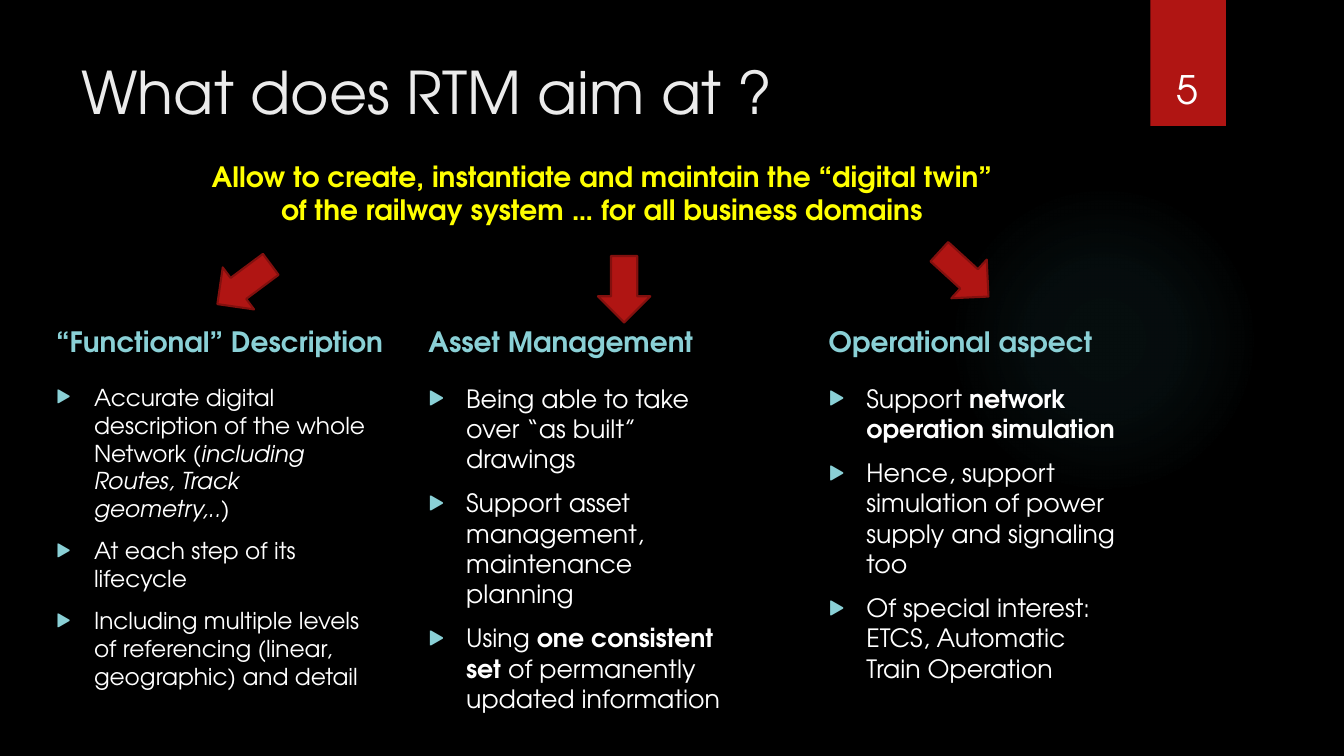
from lxml import etree
from pptx import Presentation
from pptx.dml.color import RGBColor
from pptx.enum.shapes import MSO_SHAPE as Preset
from pptx.enum.text import MSO_ANCHOR as Anchor, PP_ALIGN as Align
from pptx.oxml import parse_xml
from pptx.oxml.ns import nsdecls, qn
from pptx.util import Inches, Pt


def color(value):
    return RGBColor.from_string(value)


class SlideBuilder:
    FONT = "TeX Gyre Adventor"
    WHITE, RED, DARK_RED = "FFFFFF", "B01513", "82100E"
    AQUA, GLOW, YELLOW = "8AD0D6", "50B9C1", "FFFF00"
    TITLE = "EBEBEB"

    def __init__(self, slide):
        self.slide = slide
        fill = slide.background.fill
        fill.solid()
        fill.fore_color.rgb = color("000000")

    def shape(self, preset, left, top, width, height):
        shape = self.slide.shapes.add_shape(
            preset, Inches(left), Inches(top), Inches(width), Inches(height))
        shape.shadow.inherit = False
        shape.line.fill.background()
        return shape

    def block(self, preset, left, top, width, height):
        block = self.shape(preset, left, top, width, height)
        block.fill.solid()
        block.fill.fore_color.rgb = color(self.RED)
        return block

    def arrow(self, left, top, angle):
        arrow = self.block(Preset.RIGHT_ARROW, left, top, 0.66, 0.52)
        arrow.rotation = angle
        arrow.line.color.rgb = color(self.DARK_RED)
        arrow.line.width = Pt(1.5)

    def glow(self, left, top, size, stops):
        glow = self.shape(Preset.OVAL, left, top, size, size)
        steps = "".join(
            f'<a:gs pos="{place * 1000}"><a:srgbClr val="{self.GLOW}">'
            f'<a:alpha val="{alpha * 1000}"/></a:srgbClr></a:gs>'
            for place, alpha in stops)
        gradient = parse_xml(
            f'<a:gradFill {nsdecls("a")}><a:gsLst>{steps}</a:gsLst>'
            '<a:path path="circle"><a:fillToRect l="50000" t="50000" '
            'r="50000" b="50000"/></a:path></a:gradFill>')
        glow.element.spPr.find(qn("a:prstGeom")).addnext(gradient)

    def frame(self, left, top, width, height, anchor=Anchor.TOP, wrap=True):
        box = self.slide.shapes.add_textbox(
            Inches(left), Inches(top), Inches(width), Inches(height))
        frame = box.text_frame
        frame.word_wrap = wrap
        frame.vertical_anchor = anchor
        return frame

    def run(self, paragraph, text, size, ink, bold=False, italic=False):
        run = paragraph.add_run()
        run.text = text
        font = run.font
        font.name, font.size = self.FONT, Pt(size)
        font.bold, font.italic = bold, italic
        font.color.rgb = color(ink)

    def label(self, place, lines, size, ink, bold=False, align=Align.LEFT, **layout):
        paragraph = self.frame(*place, **layout).paragraphs[0]
        paragraph.alignment = align
        for index, line in enumerate(lines):
            if index:
                paragraph.add_line_break()
            self.run(paragraph, line, size, ink, bold)

    def bullet(self, paragraph):
        properties = paragraph._p.get_or_add_pPr()
        properties.set("marL", str(Inches(0.375)))
        properties.set("indent", str(-Inches(0.375)))
        bullet_color = etree.SubElement(properties, qn("a:buClr"))
        etree.SubElement(bullet_color, qn("a:srgbClr"), val=self.AQUA)
        etree.SubElement(properties, qn("a:buSzPct"), val="80000")
        etree.SubElement(properties, qn("a:buFont"), typeface=self.FONT)
        etree.SubElement(properties, qn("a:buChar"), char="▶")

    def column(self, left, width, heading, size, points):
        self.label((left, 3.08, 3.84, 0.52), [heading], 20, self.AQUA, True,
                   anchor=Anchor.BOTTOM)
        frame = self.frame(left, 3.75, width, 3.35)
        for index, point in enumerate(points):
            paragraph = frame.add_paragraph() if index else frame.paragraphs[0]
            self.bullet(paragraph)
            paragraph.space_before = Pt(10 if index else 0)
            for text, style in point:
                self.run(paragraph, text, size, self.WHITE,
                         bold=style == "bold", italic=style == "italic")


COLUMNS = [
    (0.46, 3.26, "“Functional” Description", 16.6, [
        [("Accurate digital description of the whole Network (", ""),
         ("including Routes, Track geometry,..", "italic"), (")", "")],
        [("At each step of its lifecycle", "")],
        [("Including multiple levels of referencing (linear, geographic) and detail", "")],
    ]),
    (4.15, 3.31, "Asset Management", 18, [
        [("Being able to take over “as built” drawings", "")],
        [("Support asset management, maintenance planning", "")],
        [("Using ", ""), ("one consistent set ", "bold"),
         ("of permanently updated information", "")],
    ]),
    (8.12, 3.1, "Operational aspect", 18, [
        [("Support ", ""), ("network operation simulation", "bold")],
        [("Hence, support simulation of power supply and signaling too", "")],
        [("Of special interest: ETCS, Automatic Train Operation", "")],
    ]),
]
ARROWS = [(2.09, 2.56, 143.3), (5.86, 2.61, 90), (9.23, 2.46, 42.4)]


def main():
    deck = Presentation()
    deck.slide_width, deck.slide_height = Inches(13.33), Inches(7.5)
    page = SlideBuilder(deck.slides.add_slide(deck.slide_layouts[6]))

    page.glow(9.41, 1.83, 3.08, [(0, 7), (36, 6), (69, 0), (100, 0)])
    page.block(Preset.RECTANGLE, 11.41, 0, 0.75, 1.25)
    page.label((11.32, 0.32, 0.92, 0.84), ["5"], 28, page.WHITE,
               align=Align.CENTER, anchor=Anchor.BOTTOM)
    page.label((0.71, 0.5, 10.29, 1.53), ["What does RTM aim at ?"], 42, page.TITLE)
    page.label((1.96, 1.53, 8.02, 0.77),
               ["Allow to create, instantiate and maintain the “digital twin”",
                "of the railway system … for all business domains"],
               20, page.YELLOW, True, Align.CENTER, wrap=False)
    for arrow in ARROWS:
        page.arrow(*arrow)
    for column in COLUMNS:
        page.column(*column)

    deck.save("out.pptx")


if __name__ == "__main__":
    main()
